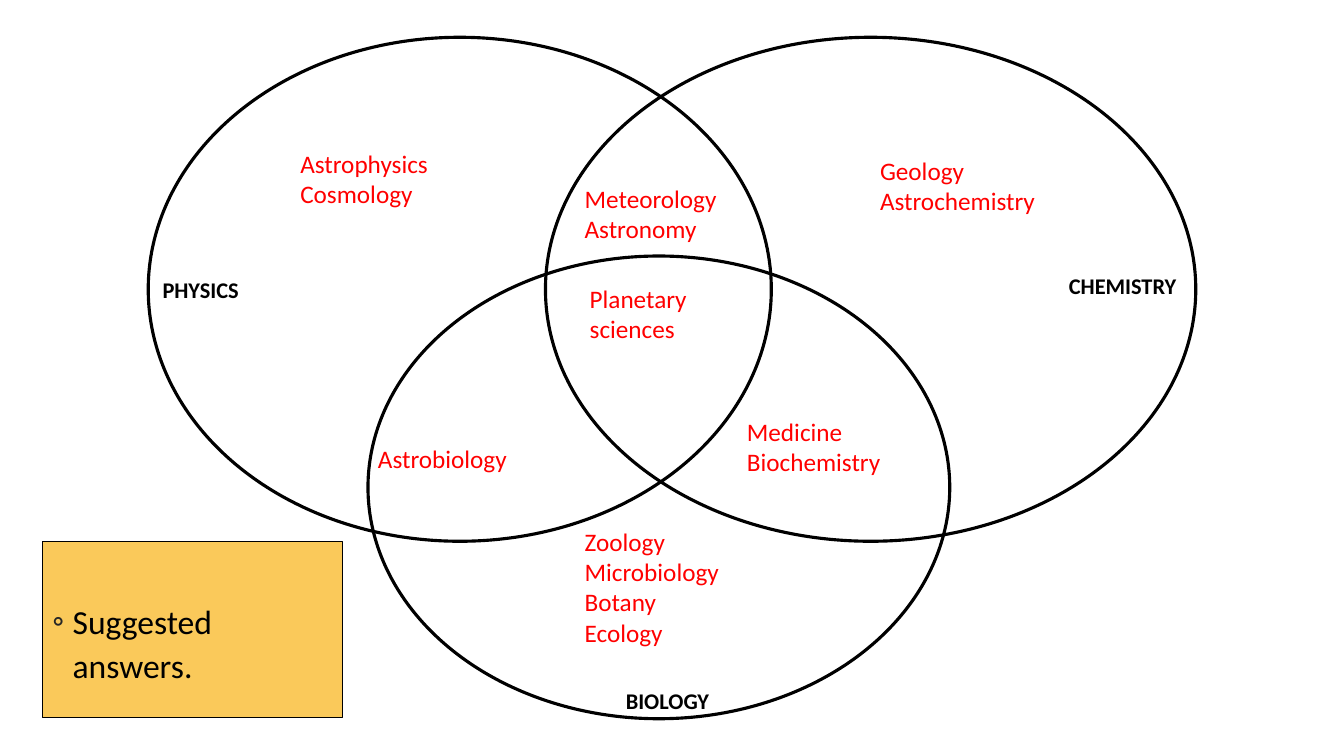
from lxml.etree import SubElement
from pptx import Presentation
from pptx.dml.color import RGBColor
from pptx.enum.shapes import MSO_SHAPE
from pptx.enum.text import MSO_ANCHOR, MSO_AUTO_SIZE, PP_ALIGN
from pptx.oxml.ns import qn
from pptx.util import Inches, Pt

BLACK = RGBColor(0x00, 0x00, 0x00)
RED = RGBColor(0xFF, 0x00, 0x00)
AMBER = RGBColor(0xFA, 0xC9, 0x5A)
BULLET_GREY = RGBColor(0x26, 0x26, 0x26)
FONT = "Calibri"

# Boxes are left, top, width, height in inches.
CIRCLES = [(1.47, 0.37, 6.18, 5), (5.41, 0.37, 6.45, 5), (3.65, 2.54, 5.77, 4.59)]
SUBJECTS = [
    ("PHYSICS", (1.21, 2.74, 1.56, 0.63)),
    ("CHEMISTRY", (10.5, 2.7, 1.27, 0.63)),
    ("BIOLOGY", (5.84, 6.82, 1.56, 0.31)),
]
ANSWERS = [
    (["Astrophysics", "Cosmology"], (2.88, 1.42, 2.45, 0.71)),
    (["Astrobiology"], (3.65, 4.35, 2.45, 0.4)),
    (["Zoology", "Microbiology", "Botany", "Ecology"], (5.7, 5.17, 2.45, 1.31)),
    (["Medicine", "Biochemistry"], (7.31, 4.08, 2.45, 0.71)),
    (["Meteorology", "Astronomy"], (5.7, 1.77, 2.45, 0.71)),
    (["Planetary sciences"], (5.75, 2.76, 1.91, 0.71)),
    (["Geology", "Astrochemistry"], (8.63, 1.49, 2.45, 0.71)),
]
NOTE_BOX = (0.42, 5.37, 2.98, 1.75)


def inches(box):
    return [Inches(length) for length in box]


def add_span(para, text, size, color, bold=False):
    span = para.add_run()
    span.text = text
    span.font.name = FONT
    span.font.size = Pt(size)
    span.font.bold = bold
    span.font.color.rgb = color


def add_circle(page, box):
    circle = page.shapes.add_shape(MSO_SHAPE.OVAL, *inches(box))
    circle.shadow.inherit = False
    circle.fill.background()
    circle.line.color.rgb = BLACK
    circle.line.width = Pt(2.25)


def add_subject(page, name, box):
    frame = page.shapes.add_textbox(*inches(box)).text_frame
    frame.word_wrap = True
    frame.margin_left = frame.margin_top = frame.margin_right = frame.margin_bottom = 0
    para = frame.paragraphs[0]
    para.alignment = PP_ALIGN.CENTER
    add_span(para, name, 16, BLACK, bold=True)


def add_answers(page, lines, box):
    frame = page.shapes.add_textbox(*inches(box)).text_frame
    frame.word_wrap = True
    frame.auto_size = MSO_AUTO_SIZE.SHAPE_TO_FIT_TEXT
    for index, line in enumerate(lines):
        para = frame.add_paragraph() if index else frame.paragraphs[0]
        add_span(para, line, 18, RED)


def set_bullet(para, symbol, color):
    properties = para._p.get_or_add_pPr()
    properties.set("marL", str(Inches(0.2)))
    properties.set("indent", str(-Inches(0.2)))
    bullet_color = SubElement(properties, qn("a:buClr"))
    SubElement(bullet_color, qn("a:srgbClr"), val=str(color))
    SubElement(properties, qn("a:buFont"), typeface=FONT)
    SubElement(properties, qn("a:buChar"), char=symbol)


def fill_note(body, box):
    body.left, body.top, body.width, body.height = inches(box)
    body.fill.solid()
    body.fill.fore_color.rgb = AMBER
    body.line.color.rgb = BLACK
    body.line.width = Pt(0.75)
    frame = body.text_frame
    frame.word_wrap = True
    frame.auto_size = MSO_AUTO_SIZE.NONE
    frame.vertical_anchor = MSO_ANCHOR.TOP
    frame.margin_top = Inches(0.55)
    frame.margin_right = Inches(0.2)
    para = frame.paragraphs[0]
    para.line_spacing = 1.1
    para.space_before = Pt(0)
    set_bullet(para, "◦", BULLET_GREY)
    add_span(para, "Suggested answers.", 24, BLACK)


def build_venn_page(deck):
    page = deck.slides.add_slide(deck.slide_layouts[1])
    title = page.shapes.title
    title.element.getparent().remove(title.element)
    fill_note(page.placeholders[1], NOTE_BOX)
    for box in CIRCLES:
        add_circle(page, box)
    for name, box in SUBJECTS:
        add_subject(page, name, box)
    for lines, box in ANSWERS:
        add_answers(page, lines, box)


def main():
    deck = Presentation()
    deck.slide_width, deck.slide_height = Inches(13.33), Inches(7.5)
    build_venn_page(deck)
    deck.save("out.pptx")


if __name__ == "__main__":
    main()
